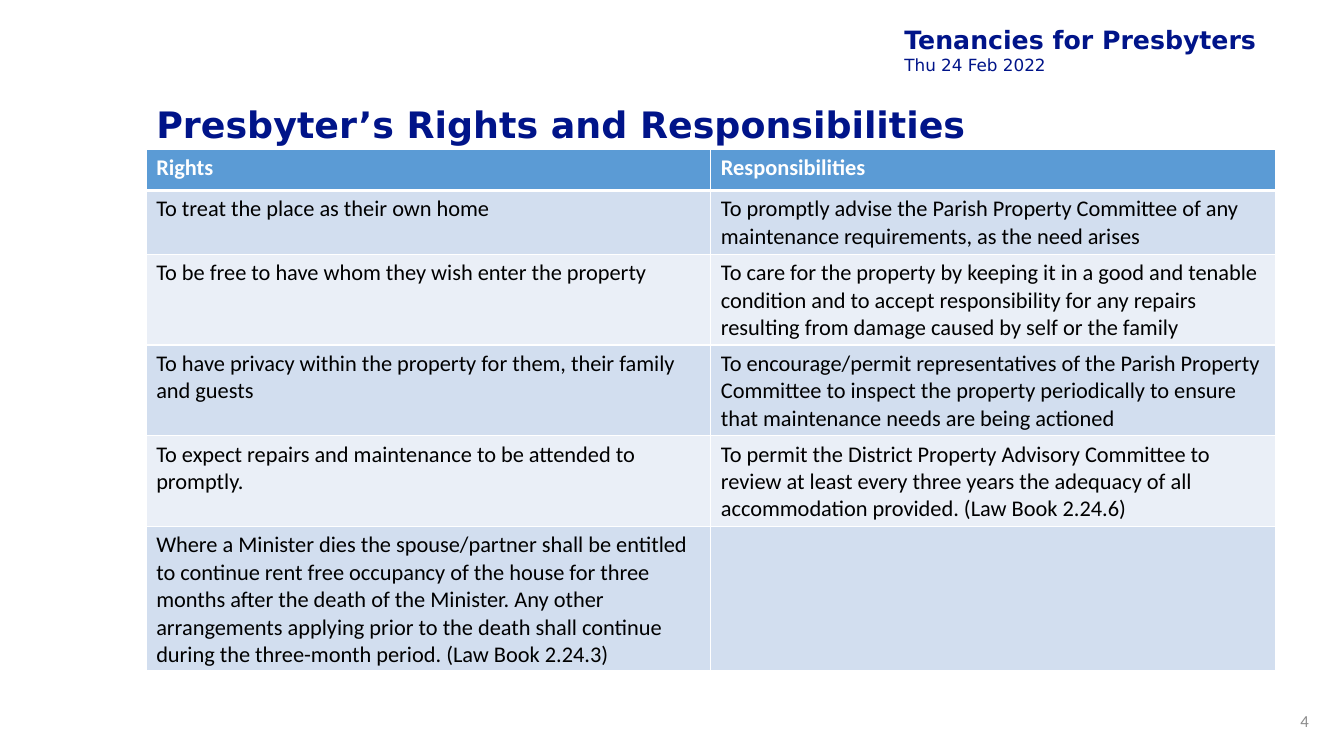
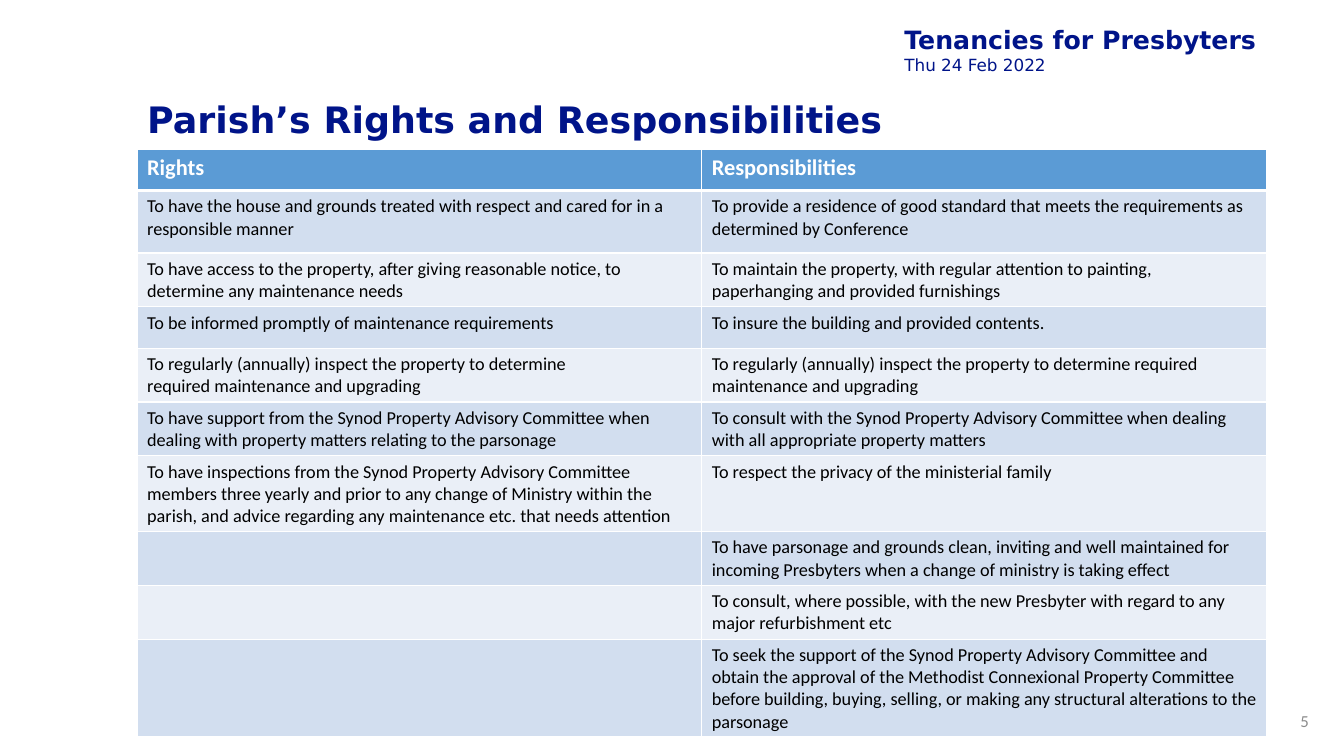
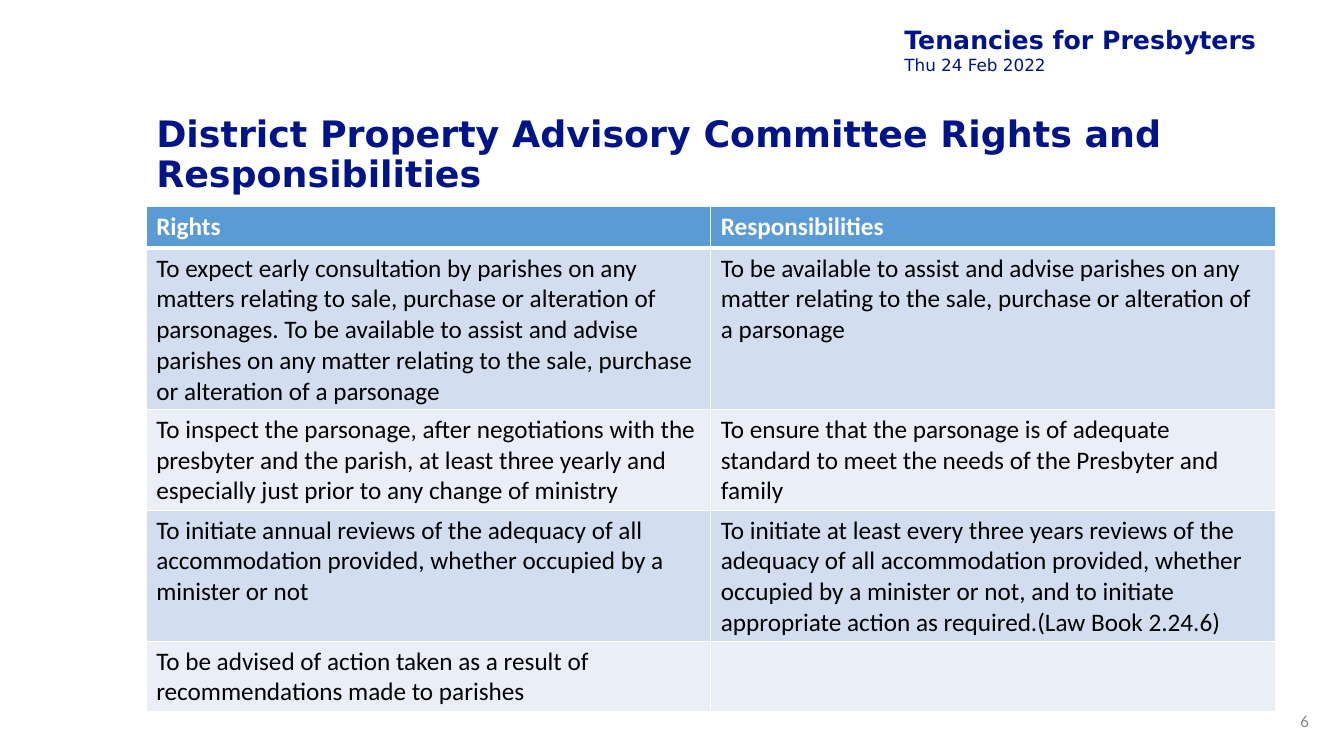
from lxml.etree import SubElement
from pptx import Presentation
from pptx.dml.color import RGBColor
from pptx.enum.text import MSO_ANCHOR, MSO_AUTO_SIZE, PP_ALIGN
from pptx.oxml.ns import qn
from pptx.util import Pt

LEFT, RIGHT = PP_ALIGN.LEFT, PP_ALIGN.RIGHT
TOP, MIDDLE = MSO_ANCHOR.TOP, MSO_ANCHOR.MIDDLE
FIXED = MSO_AUTO_SIZE.NONE

SCALE = 9144
WIDTH, HEIGHT = 1333, 750
TITLE_ONLY = 5
COLOURS = {
    "navy": "001489",
    "blue": "5B9BD5",
    "band": "D2DEEF",
    "pale": "EAEFF7",
    "white": "FFFFFF",
    "black": "000000",
    "grey": "8C8C8C",
}
FORMATS = {
    "title": {"name": "DejaVu Sans", "size": Pt(26), "bold": True},
    "event": {"name": "DejaVu Sans", "size": Pt(18), "bold": True},
    "date": {"name": "DejaVu Sans", "size": Pt(12), "bold": False},
    "number": {"name": "Calibri", "size": Pt(12), "bold": False},
    "head": {"name": "Calibri", "bold": True},
    "cell": {"name": "Calibri", "bold": False},
}
TABLE_WIDTH = 1120
ROW = 41
HEADS = ("Rights", "Responsibilities")

PAGES = [
    {
        "number": 4,
        "title": "Presbyter’s Rights and Responsibilities",
        "place": (145, 75, TABLE_WIDTH, 101),
        "top": 148,
        "sizes": (16, 16),
        "tall": {},
        "rows": [
            ("To treat the place as their own home",
             "To promptly advise the Parish Property Committee of any maintenance "
             "requirements, as the need arises"),
            ("To be free to have whom they wish enter the property",
             "To care for the property by keeping it in a good and tenable condition "
             "and to accept responsibility for any repairs resulting from damage "
             "caused by self or the family"),
            ("To have privacy within the property for them, their family and guests",
             "To encourage/permit representatives of the Parish Property Committee to "
             "inspect the property periodically to ensure that maintenance needs are "
             "being actioned"),
            ("To expect repairs and maintenance to be attended to promptly.",
             "To permit the District Property Advisory Committee to review at least "
             "every three years the adequacy of all accommodation provided. "
             "(Law Book 2.24.6)"),
            ("Where a Minister dies the spouse/partner shall be entitled to continue "
             "rent free occupancy of the house for three months after the death of the "
             "Minister. Any other arrangements applying prior to the death shall "
             "continue during the three-month period. (Law Book 2.24.3)",
             ""),
        ],
    },
    {
        "number": 5,
        "title": "Parish’s Rights and Responsibilities",
        "place": (136, 94, TABLE_WIDTH, 53),
        "top": 148,
        "sizes": (16, 13),
        "tall": {1: 62, 2: 49},
        "rows": [
            ("To have the house and grounds treated with respect and cared for in a "
             "responsible manner",
             "To provide a residence of good standard that meets the requirements as "
             "determined by Conference"),
            ("To have access to the property, after giving reasonable notice, to "
             "determine any maintenance needs",
             "To maintain the property, with regular attention to painting, "
             "paperhanging and provided furnishings"),
            ("To be informed promptly of maintenance requirements",
             "To insure the building and provided contents."),
            ("To regularly (annually) inspect the property to determine\n"
             "required maintenance and upgrading",
             "To regularly (annually) inspect the property to determine required "
             "maintenance and upgrading"),
            ("To have support from the Synod Property Advisory Committee when dealing "
             "with property matters relating to the parsonage",
             "To consult with the Synod Property Advisory Committee when dealing with "
             "all appropriate property matters"),
            ("To have inspections from the Synod Property Advisory Committee members "
             "three yearly and prior to any change of Ministry within the parish, and "
             "advice regarding any maintenance etc. that needs attention",
             "To respect the privacy of the ministerial family"),
            ("",
             "To have parsonage and grounds clean, inviting and well maintained for "
             "incoming Presbyters when a change of ministry is taking effect"),
            ("",
             "To consult, where possible, with the new Presbyter with regard to any "
             "major refurbishment etc"),
            ("",
             "To seek the support of the Synod Property Advisory Committee and obtain "
             "the approval of the Methodist Connexional Property Committee before "
             "building, buying, selling, or making any structural alterations to the "
             "parsonage"),
        ],
    },
    {
        "number": 6,
        "title": "District Property Advisory Committee Rights and Responsibilities",
        "place": (145, 104, TABLE_WIDTH, 101),
        "top": 205,
        "sizes": (18, 18),
        "tall": {},
        "rows": [
            ("To expect early consultation by parishes on any matters relating to sale, "
             "purchase or alteration of parsonages. To be available to assist and "
             "advise parishes on any matter relating to the sale, purchase or "
             "alteration of a parsonage",
             "To be available to assist and advise parishes on any matter relating to "
             "the sale, purchase or alteration of a parsonage"),
            ("To inspect the parsonage, after negotiations with the presbyter and the "
             "parish, at least three yearly and especially just prior to any change "
             "of ministry",
             "To ensure that the parsonage is of adequate standard to meet the needs "
             "of the Presbyter and family"),
            ("To initiate annual reviews of the adequacy of all accommodation "
             "provided, whether occupied by a minister or not",
             "To initiate at least every three years reviews of the adequacy of all "
             "accommodation provided, whether occupied by a minister or not, and to "
             "initiate appropriate action as required.(Law Book 2.24.6)"),
            ("To be advised of action taken as a result of recommendations made to "
             "parishes",
             ""),
        ],
    },
]


def px(*values):
    """Turn whole px into EMU."""
    return [value * SCALE for value in values]


class Deck:
    """Hold the style and the current slide."""

    def __init__(self):
        """Start an empty wide deck."""
        self.deck = Presentation()
        self.deck.slide_width, self.deck.slide_height = px(WIDTH, HEIGHT)
        self.slide = None

    def page(self):
        """Add a slide with its running header."""
        layout = self.deck.slide_layouts[TITLE_ONLY]
        self.slide = self.deck.slides.add_slide(layout)
        lines = [("Tenancies for Presbyters", "event"), ("Thu 24 Feb 2022", "date")]
        frame = self.text((890, 20, 369, 58), lines, "navy")
        sides = ("margin_left", "margin_top", "margin_right", "margin_bottom")
        for side, value in zip(sides, px(7, 4, 7, 4)):
            setattr(frame, side, value)

    def style(self, par, kind, colour, **more):
        """Set the font of a paragraph."""
        for key, value in {**FORMATS[kind], **more}.items():
            setattr(par.font, key, value)
        par.font.color.rgb = RGBColor.from_string(COLOURS[colour])

    def text(self, place, lines, colour, align=LEFT, anchor=TOP):
        """Add a text box with one style a line."""
        frame = self.slide.shapes.add_textbox(*px(*place)).text_frame
        frame.word_wrap = True
        frame.vertical_anchor = anchor
        frame.text = "\n".join(line for line, kind in lines)
        for par, (line, kind) in zip(frame.paragraphs, lines):
            par.alignment = align
            self.style(par, kind, colour)
        return frame

    def title(self, words, place):
        """Fill and place the title."""
        shape = self.slide.shapes.title
        shape.left, shape.top, shape.width, shape.height = px(*place)
        frame = shape.text_frame
        frame.text = words
        for key, value in {"word_wrap": True, "auto_size": FIXED,
                           "vertical_anchor": MIDDLE}.items():
            setattr(frame, key, value)
        par = frame.paragraphs[0]
        par.alignment, par.line_spacing = LEFT, 0.9
        self.style(par, "title", "navy")

    def edge(self, cell, widths):
        """Draw white borders round a cell."""
        props = cell._tc.get_or_add_tcPr()
        for side, width in widths.items():
            line = SubElement(props, qn(f"a:ln{side}"), w=str(Pt(width)))
            fill = SubElement(line, qn("a:solidFill"))
            SubElement(fill, qn("a:srgbClr"), val=COLOURS["white"])

    def cell(self, cell, words, kind, size, ink, fill, widths):
        """Fill one table cell."""
        self.edge(cell, widths)
        cell.fill.solid()
        cell.fill.fore_color.rgb = RGBColor.from_string(COLOURS[fill])
        cell.text_frame.text = words
        for par in cell.text_frame.paragraphs:
            self.style(par, kind, ink, size=Pt(size))

    def table(self, left, top, rows, sizes, tall):
        """Add a banded table under a head row."""
        rows = [HEADS, *rows]
        place = px(left, top, TABLE_WIDTH, ROW * len(rows))
        table = self.slide.shapes.add_table(len(rows), len(HEADS), *place).table
        for i, row in enumerate(rows):
            table.rows[i].height = px(tall.get(i, ROW))[0]
            band = "band" if i % 2 else "pale"
            look = ("cell", sizes[1], "black", band) if i else (
                "head", sizes[0], "white", "blue")
            widths = {"L": 1, "R": 1, "T": 3 if i == 1 else 1, "B": 1 if i else 3}
            for j, words in enumerate(row):
                self.cell(table.cell(i, j), words, *look, widths)

    def number(self, value):
        """Add the page number."""
        self.text((1264, 695, 44, 40), [(str(value), "number")], "grey",
                  RIGHT, MIDDLE)

    def save(self):
        """Write the file."""
        self.deck.save("out.pptx")


def main():
    """Build every page."""
    deck = Deck()
    for page in PAGES:
        deck.page()
        deck.title(page["title"], page["place"])
        deck.table(page["place"][0], page["top"], page["rows"], page["sizes"],
                   page["tall"])
        deck.number(page["number"])
    deck.save()


if __name__ == "__main__":
    main()
